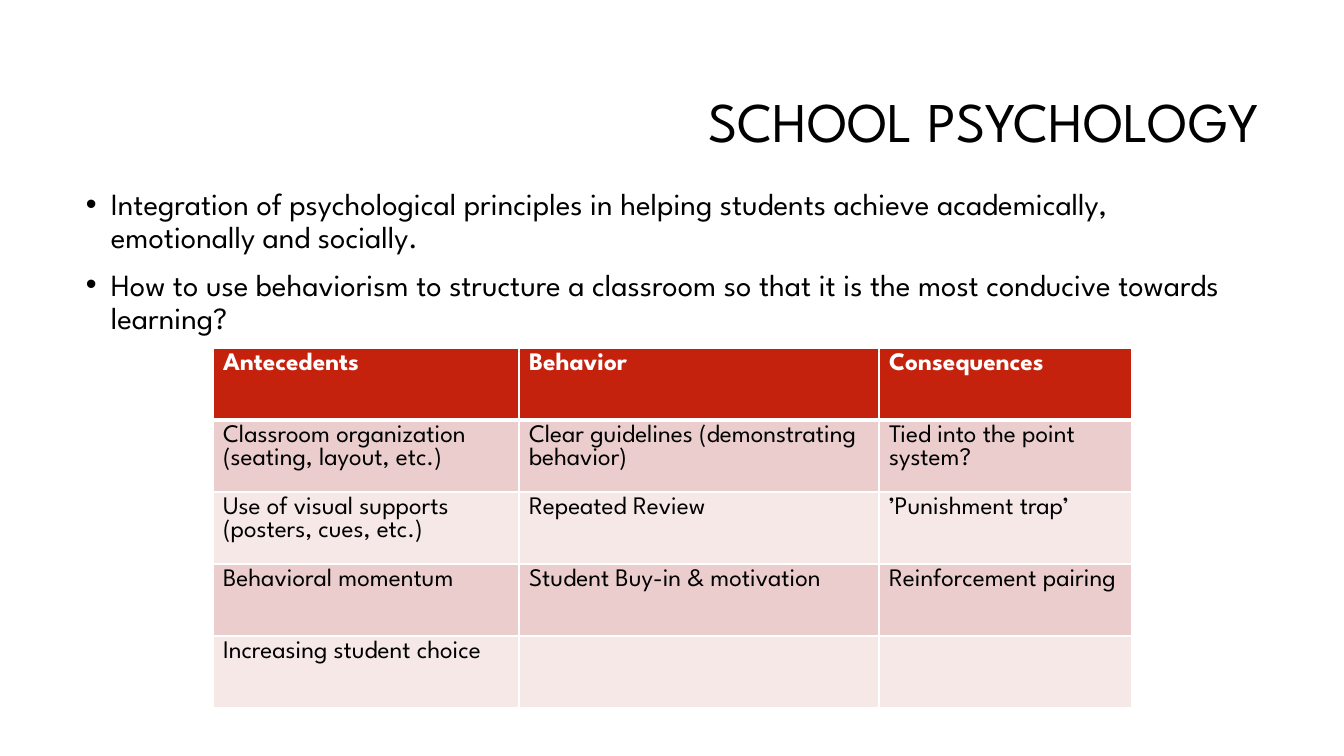
from lxml.etree import SubElement
from pptx import Presentation
from pptx.dml.color import RGBColor
from pptx.enum.text import MSO_ANCHOR, PP_ALIGN
from pptx.oxml.ns import qn
from pptx.util import Pt

TITLE = "SCHOOL PSYCHOLOGY"
BULLETS = [
    "Integration of psychological principles in helping students achieve academically, "
    "emotionally and socially.",
    "How to use behaviorism to structure a classroom so that it is the most conducive "
    "towards learning?",
]
ROWS = [
    ("Antecedents", "Behavior", "Consequences"),
    ("Classroom organization (seating, layout, etc.)",
     "Clear guidelines (demonstrating behavior)", "Tied into the point system?"),
    ("Use of visual supports (posters, cues, etc.)", "Repeated Review", "’Punishment trap’"),
    ("Behavioral momentum", "Student Buy-in & motivation", "Reinforcement pairing"),
    ("Increasing student choice", "", ""),
]
COLORS = {"text": "000000", "white": "FFFFFF", "header": "C4220D",
          "odd": "EACDCC", "even": "F5E8E7"}
FONT = "League Spartan"
SLIDE_SIZE = (1344, 756)
TITLE_BOX = (320, 85, 949, 79)
BODY_BOX = (76, 184, 1192, 501)
TABLE_AT = (213, 348)
COL_WIDTHS = (306, 360, 253)
ROW_HEIGHT = 72
BULLET_INDENT = 25
EMU_PER_PX = 914400 / 100.8


def px(n):
    return round(n * EMU_PER_PX)


def rgb(name):
    return RGBColor.from_string(COLORS[name])


def set_font(font, size, color="text", bold=False):
    for name, value in {"name": FONT, "size": Pt(size), "bold": bold}.items():
        setattr(font, name, value)
    font.color.rgb = rgb(color)


def add_text(slide, box, lines, size, anchor, fmt, bullet=False):
    tf = slide.shapes.add_textbox(*map(px, box)).text_frame
    tf.word_wrap = True
    tf.vertical_anchor = anchor
    for i, line in enumerate(lines):
        p = tf.paragraphs[0] if i == 0 else tf.add_paragraph()
        for name, value in fmt.items():
            setattr(p, name, value)
        if i:
            p.space_before = Pt(10)
        if bullet:
            pPr = p._p.get_or_add_pPr()
            pPr.set("marL", str(px(BULLET_INDENT)))
            pPr.set("indent", str(-px(BULLET_INDENT)))
            SubElement(pPr, qn("a:buFont"), typeface="Arial")
            SubElement(pPr, qn("a:buChar"), char="•")
        r = p.add_run()
        r.text = line
        set_font(r.font, size)


def add_borders(cell, widths):
    """Draw white cell edges; widths are points by side."""
    tcPr = cell._tc.get_or_add_tcPr()
    for i, (side, width) in enumerate(widths.items()):
        ln = tcPr.makeelement(qn(f"a:ln{side}"), {"w": str(Pt(width))})
        fill = SubElement(ln, qn("a:solidFill"))
        SubElement(fill, qn("a:srgbClr"), val=COLORS["white"])
        tcPr.insert(i, ln)


def add_table(slide):
    size = (sum(COL_WIDTHS), ROW_HEIGHT * len(ROWS))
    table = slide.shapes.add_table(
        len(ROWS), len(COL_WIDTHS), *map(px, TABLE_AT + size)).table
    for col, width in zip(table.columns, COL_WIDTHS):
        col.width = px(width)
    for i, row in enumerate(ROWS):
        table.rows[i].height = px(ROW_HEIGHT)
        header = i == 0
        fill = "header" if header else "odd" if i % 2 else "even"
        for j, text in enumerate(row):
            cell = table.cell(i, j)
            cell.fill.solid()
            cell.fill.fore_color.rgb = rgb(fill)
            add_borders(cell, {"L": 1, "R": 1, "T": 3 if i == 1 else 1,
                               "B": 3 if header else 1})
            p = cell.text_frame.paragraphs[0]
            if text:
                r = p.add_run()
                r.text = text
                set_font(r.font, 18, "white" if header else "text", header)


def main():
    prs = Presentation()
    prs.slide_width, prs.slide_height = map(px, SLIDE_SIZE)
    s = prs.slides.add_slide(prs.slide_layouts[6])
    add_text(s, TITLE_BOX, [TITLE], 40, MSO_ANCHOR.MIDDLE,
             {"alignment": PP_ALIGN.RIGHT, "line_spacing": 0.9})
    add_text(s, BODY_BOX, BULLETS, 22, MSO_ANCHOR.TOP, {"line_spacing": 0.9}, bullet=True)
    add_table(s)
    prs.save("out.pptx")


if __name__ == "__main__":
    main()
